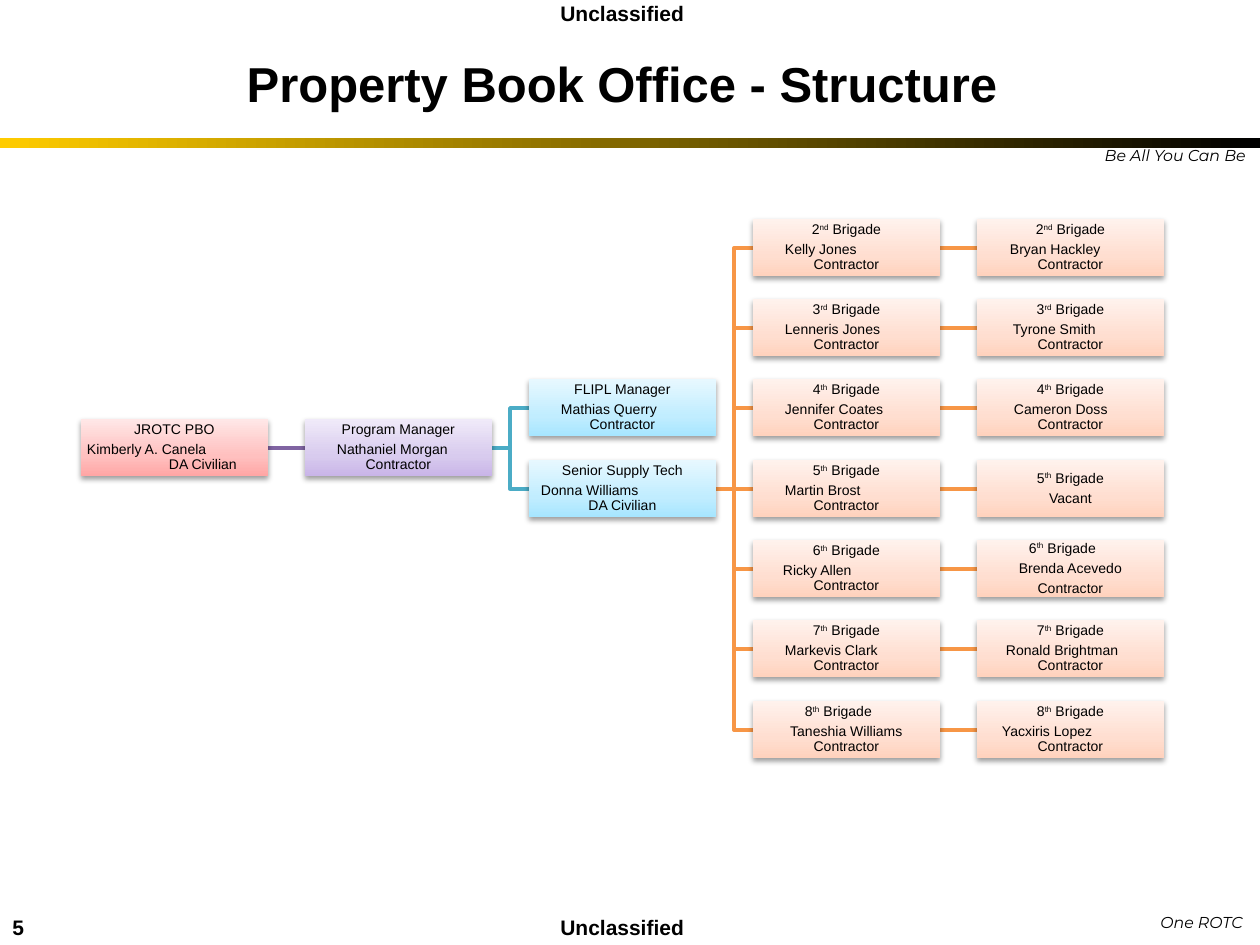
from lxml import etree
from pptx import Presentation
from pptx.dml.color import RGBColor
from pptx.enum.shapes import MSO_CONNECTOR, MSO_SHAPE
from pptx.enum.text import MSO_ANCHOR, PP_ALIGN
from pptx.oxml import parse_xml
from pptx.oxml.ns import nsdecls, qn
from pptx.util import Emu, Pt

PX = 914400 // 126
LEFT, CENTER, RIGHT = PP_ALIGN.LEFT, PP_ALIGN.CENTER, PP_ALIGN.RIGHT
MIDDLE, BOTTOM, TOP = MSO_ANCHOR.MIDDLE, MSO_ANCHOR.BOTTOM, MSO_ANCHOR.TOP
RECT, STRAIGHT = MSO_SHAPE.RECTANGLE, MSO_CONNECTOR.STRAIGHT

BLACK = RGBColor(0x00, 0x00, 0x00)
GOLD = RGBColor(0xFF, 0xCC, 0x00)
ORANGE = RGBColor(0xF7, 0x96, 0x46)
TEAL = RGBColor(0x4B, 0xAC, 0xC6)
PURPLE = RGBColor(0x80, 0x64, 0xA2)
# Gradient stops of the boxes, from bottom to top
RED_FILL = [(0, RGBColor(0xFF, 0xA6, 0xA5)), (35, RGBColor(0xFF, 0xC0, 0xBF)),
            (100, RGBColor(0xFF, 0xE7, 0xE7))]
PURPLE_FILL = [(0, RGBColor(0xC9, 0xB5, 0xE8)), (35, RGBColor(0xD8, 0xCB, 0xEE)),
               (100, RGBColor(0xF0, 0xEA, 0xF9))]
BLUE_FILL = [(0, RGBColor(0xA7, 0xE6, 0xFF)), (35, RGBColor(0xC1, 0xED, 0xFF)),
             (100, RGBColor(0xE7, 0xF8, 0xFF))]
PEACH_FILL = [(0, RGBColor(0xFF, 0xD2, 0xBD)), (35, RGBColor(0xFF, 0xDE, 0xD0)),
              (100, RGBColor(0xFF, 0xF2, 0xED))]

BOX_W, BOX_H = 187, 57
COLS = [81 + 224 * i for i in range(5)]
ROW_TOP, ROWS_SPAN = 219, 482

SHADOW = (f'<a:effectLst {nsdecls("a")}><a:outerShdw blurRad="40000" dist="20000" '
          'dir="5400000" rotWithShape="0"><a:srgbClr val="000000">'
          '<a:alpha val="38000"/></a:srgbClr></a:outerShdw></a:effectLst>')

prs = Presentation()
prs.slide_width, prs.slide_height = Emu(1260 * PX), Emu(945 * PX)
s = prs.slides.add_slide(prs.slide_layouts[6])
shapes = s.shapes


def row_top(row):
    return ROW_TOP + int(row * ROWS_SPAN / 6)


def set_gradient(sp, stops, angle):
    """Fill with (percent, colour) stops along an angle in clockwise degrees."""
    sp.fill.gradient()
    grad = sp._element.spPr.find(qn("a:gradFill"))
    gs_list = "".join(f'<a:gs pos="{pos * 1000}"><a:srgbClr val="{color}"/></a:gs>'
                      for pos, color in stops)
    grad.getparent().replace(grad, parse_xml(
        f'<a:gradFill {nsdecls("a")} rotWithShape="1"><a:gsLst>{gs_list}</a:gsLst>'
        f'<a:lin ang="{angle * 60000}" scaled="0"/></a:gradFill>'))


# Header bar
sp = shapes.add_shape(RECT, 0, 138 * PX, 1260 * PX, 10 * PX)
sp.shadow.inherit = False
sp.line.fill.background()
set_gradient(sp, [(0, GOLD), (100, BLACK)], 0)

# Title, markings and slogans: text, place, size, font, bold, italic, align, anchor
LABELS = [
    ("One ROTC", (1140, 907, 115, 32), 9, "Montserrat", False, True, RIGHT, TOP),
    ("Be All You Can Be", (1075, 140, 183, 32), 9, "Montserrat", False, True, RIGHT, TOP),
    ("5", (0, 905, 116, 41), 12, "Arial", True, False, LEFT, BOTTOM),
    ("Unclassified", (548, 908, 150, 38), 12, "Arial", True, False, LEFT, TOP),
    ("Unclassified", (548, -6, 150, 38), 12, "Arial", True, False, LEFT, TOP),
    ("Property Book Office - Structure", (97, 47, 1050, 72), 28, "Arial", True, False,
     CENTER, MIDDLE),
]
for text, place, size, font, bold, italic, align, anchor in LABELS:
    tf = shapes.add_textbox(*(v * PX for v in place)).text_frame
    tf.word_wrap = False
    tf.vertical_anchor = anchor
    p = tf.paragraphs[0]
    p.alignment = align
    r = p.add_run()
    r.text = text
    r.font.size, r.font.name = Pt(size), font
    r.font.bold, r.font.italic = bold, italic
    r.font.color.rgb = BLACK

# Links: colour, column on the left, row on the left, row on the right
links = [(PURPLE, 0, 2.5, 2.5), (TEAL, 1, 2.5, 2), (TEAL, 1, 2.5, 3)]
for row in range(7):
    links += [(ORANGE, 2, 3, row), (ORANGE, 3, row, row)]
for color, col, row_from, row_to in links:
    x1, x2 = COLS[col] + BOX_W, COLS[col + 1]
    y1, y2 = (row_top(row) + BOX_H // 2 + 1 for row in (row_from, row_to))
    if y1 == y2:
        sp = shapes.add_connector(STRAIGHT, x1 * PX, y1 * PX, x2 * PX, y2 * PX)
        etree.SubElement(sp._element.spPr, qn("a:effectLst"))
    else:
        mid = (x1 + x2) // 2
        path = shapes.build_freeform(x1, y1, scale=PX)
        path.add_line_segments([(mid, y1), (mid, y2), (x2, y2)], close=False)
        sp = path.convert_to_shape()
        sp.fill.background()
        sp.shadow.inherit = False
    sp.line.color.rgb = color
    sp.line.width = Pt(2)

# Boxes: fill, column, row, lines. A line is its text, its indent (None = centred)
# and the points after it; bars in the text enclose a superscript.
GAP = 2.8
CONTRACTOR = ("Contractor", None, 0)
boxes = [
    (RED_FILL, 0, 2.5, [("JROTC PBO", None, GAP), ("Kimberly A. Canela", 5, 0),
                        ("DA Civilian", 87, 0)]),
    (PURPLE_FILL, 1, 2.5, [("Program Manager", None, GAP), ("Nathaniel Morgan", 31, 0),
                           CONTRACTOR]),
    (BLUE_FILL, 2, 2, [("FLIPL Manager", None, GAP), ("Mathias Querry", 31, 0), CONTRACTOR]),
    (BLUE_FILL, 2, 3, [("Senior Supply Tech", None, GAP), ("Donna Williams", 11, 0),
                       ("DA Civilian", None, 0)]),
]
# Brigade, then name and indent for each of the two columns
BRIGADES = [
    ("2|nd|", ("Kelly Jones", 31), ("Bryan Hackley", 32)),
    ("3|rd|", ("Lenneris Jones", 31), ("Tyrone Smith", 35)),
    ("4|th|", ("Jennifer Coates", 31), ("Cameron Doss", 36)),
    ("5|th|", ("Martin Brost", 31), ("Vacant", None)),
    ("6|th|", ("Ricky Allen", 29), ("Brenda Acevedo", None)),
    ("7|th|", ("Markevis Clark", 31), ("Ronald Brightman", 28)),
    ("8|th|", ("Taneshia Williams", None), ("Yacxiris Lopez", 24)),
]
for row, (ordinal, *people) in enumerate(BRIGADES):
    for col, (name, indent) in enumerate(people, start=3):
        shifted = name in ("Brenda Acevedo", "Taneshia Williams")
        after = GAP if name == "Brenda Acevedo" else 0
        lines = [(ordinal + " Brigade", 51 if shifted else None, GAP), (name, indent, after)]
        if name != "Vacant":
            lines.append(CONTRACTOR)
        boxes.append((PEACH_FILL, col, row, lines))

for stops, col, row, lines in boxes:
    sp = shapes.add_shape(RECT, COLS[col] * PX, row_top(row) * PX, BOX_W * PX, BOX_H * PX)
    sp.line.fill.background()
    set_gradient(sp, stops, 270)
    sp._element.spPr.append(parse_xml(SHADOW))
    tf = sp.text_frame
    tf.word_wrap = True
    tf.vertical_anchor = MIDDLE
    tf.margin_left = tf.margin_right = tf.margin_top = tf.margin_bottom = PX
    for i, (text, indent, after) in enumerate(lines):
        p = tf.add_paragraph() if i else tf.paragraphs[0]
        p.line_spacing = 0.9
        p.space_after = Pt(after)
        p.alignment = CENTER if indent is None else LEFT
        if indent is not None:
            p._p.get_or_add_pPr().set("marL", str(indent * PX))
        for j, part in enumerate(text.split("|")):
            r = p.add_run()
            r.text = part
            r.font.size, r.font.name = Pt(8), "Arial"
            r.font.color.rgb = BLACK
            if j == 1:
                r._r.get_or_add_rPr().set("baseline", "30000")

prs.save("out.pptx")
